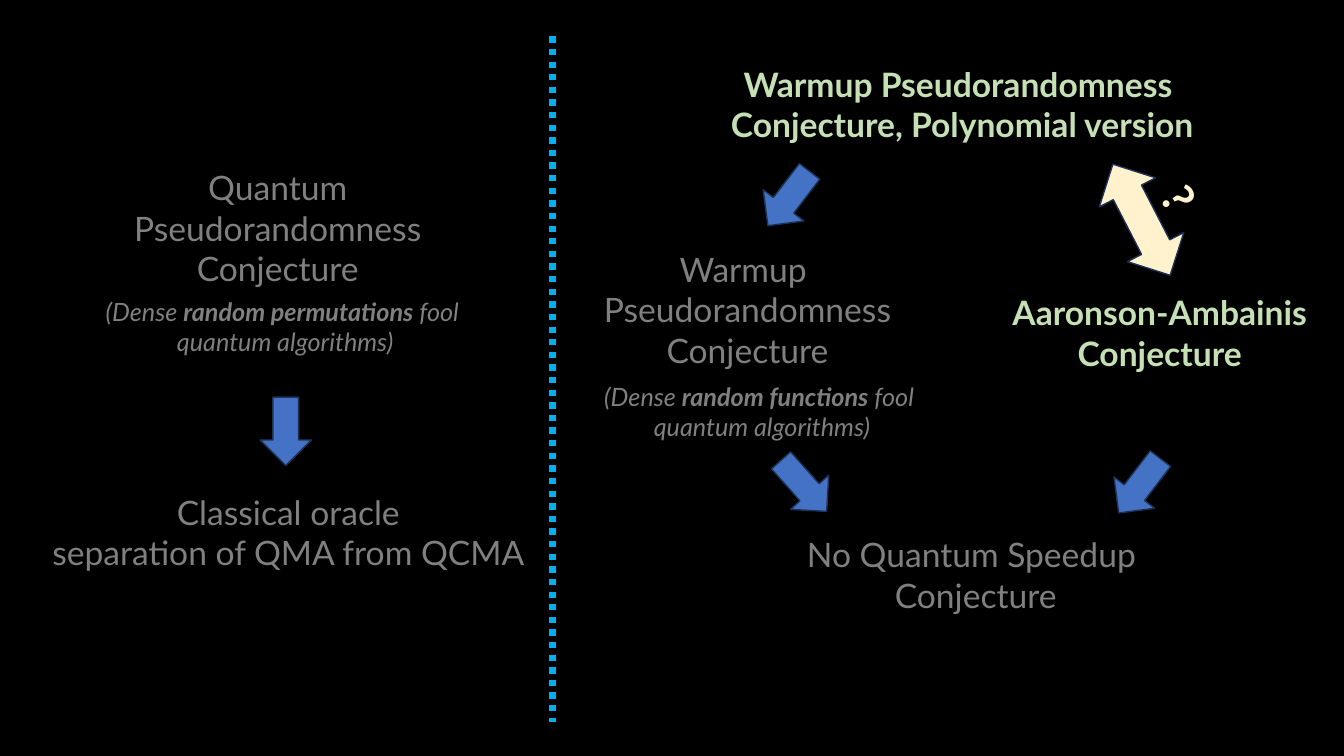
"""Build a slide that maps how pseudorandomness conjectures imply one another."""
from pptx import Presentation, util as u
from pptx.dml.color import RGBColor
from pptx.enum import dml, shapes, text
from lxml import etree

COLS, ROWS = 80, 45
GREY, GREEN, CREAM, BLUE = "808080", "C5E0B4", "FFF2CC", "4472C4"

deck = Presentation()
deck.slide_width, deck.slide_height = u.Inches(13.333), u.Inches(7.5)
cell = deck.slide_height / ROWS
slide = deck.slides.add_slide(deck.slide_layouts[6])
hue = RGBColor.from_string
slide.background.fill.solid()
slide.background.fill.fore_color.rgb = hue("000000")


def grid(*units):
    return [round(n * cell) for n in units]


def write(words, x, y, wide, rows, size=24, color=GREY, bold=False,
          slant=False, align=text.PP_ALIGN.CENTER, turn=0):
    """Place text; newlines break lines and asterisks enclose bold words."""
    box = slide.shapes.add_textbox(*grid(x, y, wide, rows * size / 10 + 0.66))
    box.rotation = turn
    frame = box.text_frame
    frame.word_wrap = True
    frame.auto_size = text.MSO_AUTO_SIZE.SHAPE_TO_FIT_TEXT
    para = frame.paragraphs[0]
    para.alignment = align
    for i, part in enumerate(words.split("*")):
        for j, line in enumerate(part.split("\n")):
            if j:
                para.add_line_break()
            run = para.add_run()
            run.text = line
            font = run.font
            font.name, font.size = "Lato", u.Pt(size)
            font.bold, font.italic = bold or i % 2 == 1, slant
            font.color.rgb = hue(color)


write("No Quantum Speedup \nConjecture", 42.36, 31.5, 31.44, 2)
write("Aaronson-Ambainis Conjecture", 55.92, 17.1, 26.22, 2,
      color=GREEN, bold=True)
write("Warmup \nPseudorandomness Conjecture", 30.84, 14.52, 27.3, 3)
write("Warmup Pseudorandomness \nConjecture, Polynomial version",
      38.94, 3.48, 36.66, 2, color=GREEN, bold=True)
write("Quantum\nPseudorandomness Conjecture", 2.88, 9.66, 27.3, 3)
write("Classical oracle\nseparation of QMA from QCMA", 1.44, 28.98, 31.44, 2)
for kind, x, y in [("permutations", 1.26, 17.34), ("functions", 29.64, 22.38)]:
    write(f"(Dense *random {kind}* fool \nquantum algorithms)",
          x, y, 31.44, 2, size=18, slant=True)

down, both = shapes.MSO_SHAPE.DOWN_ARROW, shapes.MSO_SHAPE.UP_DOWN_ARROW
for form, x, y, wide, high, turn, color in [
    (down, 45.42, 9.78, 3.06, 4.08, 37.5, BLUE),
    (down, 66.3, 26.88, 3.06, 4.08, 37.5, BLUE),
    (down, 46.32, 26.88, 3.06, 4.08, 318.2, BLUE),
    (down, 15.48, 23.64, 3.06, 4.08, 0, BLUE),
    (both, 66.06, 9.36, 3.78, 7.44, 332.7, CREAM),
]:
    arrow = slide.shapes.add_shape(form, *grid(x, y, wide, high))
    arrow.rotation = turn
    arrow.shadow.inherit = False
    arrow.fill.solid()
    arrow.fill.fore_color.rgb = hue(color)
    arrow.line.color.rgb = hue("1E3256")
    arrow.line.width = u.Pt(1)

write("?", 68.82, 10.14, 3.06, 1, size=32, color=CREAM, bold=True,
      align=text.PP_ALIGN.LEFT, turn=61.5)

split = slide.shapes.add_connector(shapes.MSO_CONNECTOR.STRAIGHT,
                                   *grid(32.88, 2.16, 32.88, 42.96))
split.line.color.rgb = hue("00B0F0")
split.line.width = u.Pt(4.5)
split.line.dash_style = dml.MSO_LINE.ROUND_DOT
main = "http://schemas.openxmlformats.org/drawingml/2006/main"
etree.SubElement(split._element.spPr, f"{{{main}}}effectLst")

deck.save("out.pptx")
